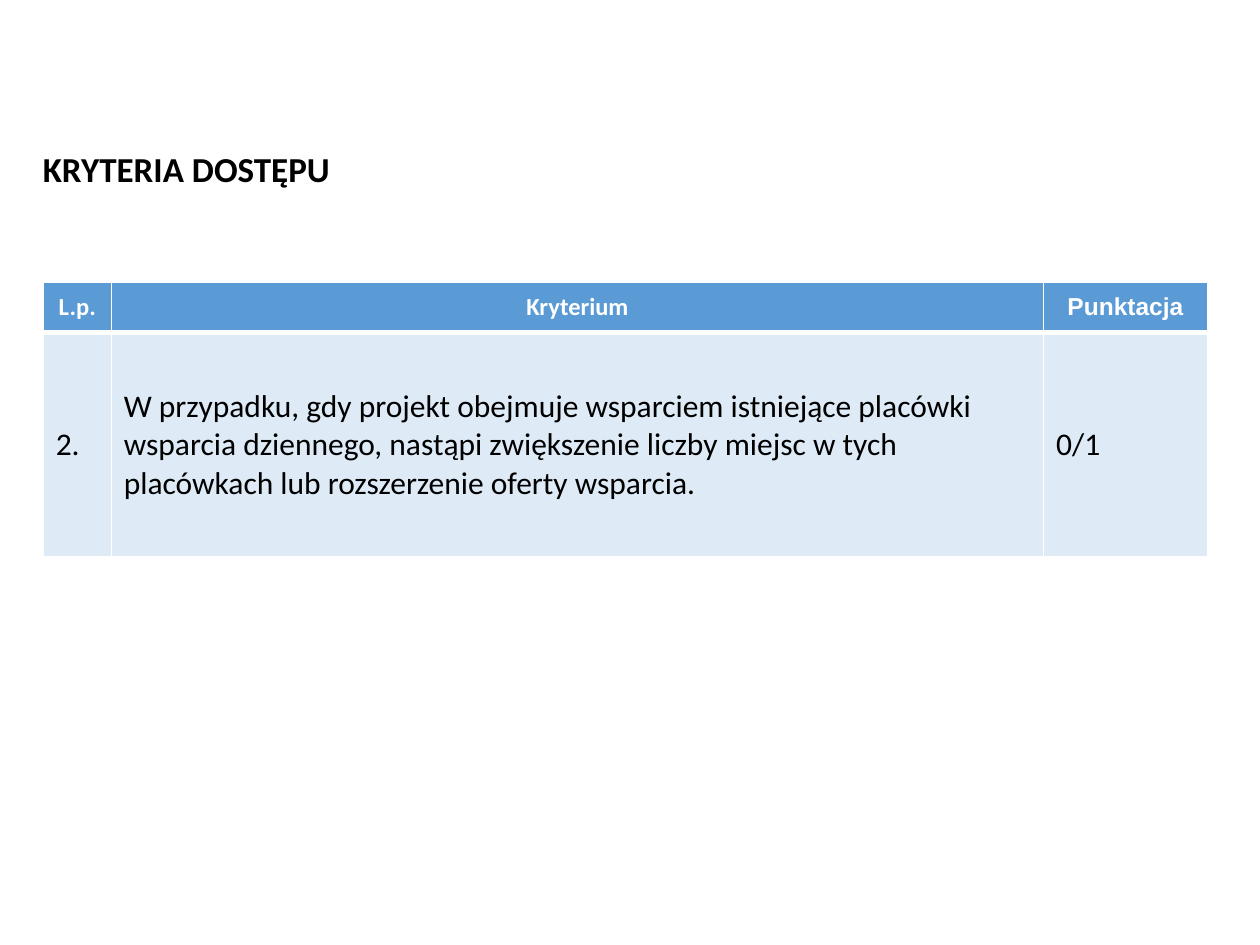
import pptx
import pptx.dml.color
import pptx.enum.text
import pptx.oxml
import pptx.oxml.ns
import pptx.util

Pt = pptx.util.Pt
RGBColor = pptx.dml.color.RGBColor
MSO_ANCHOR = pptx.enum.text.MSO_ANCHOR
PP_ALIGN = pptx.enum.text.PP_ALIGN

WHITE = RGBColor(0xFF, 0xFF, 0xFF)
BLACK = RGBColor(0x00, 0x00, 0x00)
BLUE = RGBColor(0x5B, 0x9B, 0xD5)
PALE_BLUE = RGBColor(0xDE, 0xEB, 0xF7)

COLUMN_WIDTHS = [38.9, 532.8, 93.6]
ROW_HEIGHTS = [28.8, 128.2]
HEADERS = [("L.p.", "Calibri"), ("Kryterium", "Calibri"), ("Punktacja", "Arial")]
CRITERION = [
    "2.",
    "W przypadku, gdy projekt obejmuje wsparciem istniejące placówki "
    "wsparcia dziennego, nastąpi zwiększenie liczby miejsc w tych "
    "placówkach lub rozszerzenie oferty wsparcia.",
    "0/1",
]


def add_run(p, text, size, color, bold, font="Calibri"):
    r = p.add_run()
    r.text = text
    r.font.name = font
    r.font.size = Pt(size)
    r.font.bold = bold
    r.font.color.rgb = color


def set_borders(cell, bottom):
    tc_pr = cell._tc.get_or_add_tcPr()
    widths = {"lnL": 1, "lnR": 1, "lnT": 1, "lnB": bottom}
    for i, (tag, width) in enumerate(widths.items()):
        ln = pptx.oxml.parse_xml(
            f'<a:{tag} {pptx.oxml.ns.nsdecls("a")} w="{Pt(width)}">'
            f'<a:solidFill><a:srgbClr val="{WHITE}"/></a:solidFill></a:{tag}>'
        )
        tc_pr.insert(i, ln)


def fill_cell(cell, text, size, color, bold, fill, align, bottom, font="Calibri"):
    cell.vertical_anchor = MSO_ANCHOR.MIDDLE
    cell.fill.solid()
    cell.fill.fore_color.rgb = fill
    set_borders(cell, bottom)
    p = cell.text_frame.paragraphs[0]
    p.alignment = align
    add_run(p, text, size, color, bold, font)


def place_title(slide, left, top, width, height):
    sp = slide.shapes.title
    sp.left, sp.top, sp.width, sp.height = Pt(left), Pt(top), Pt(width), Pt(height)
    tf = sp.text_frame
    tf.word_wrap = True
    tf.auto_size = pptx.enum.text.MSO_AUTO_SIZE.SHAPE_TO_FIT_TEXT
    tf.vertical_anchor = MSO_ANCHOR.MIDDLE
    p = tf.paragraphs[0]
    p.alignment = PP_ALIGN.LEFT
    add_run(p, "KRYTERIA DOSTĘPU", 20, BLACK, True)


def add_criteria_table(slide, left, top, width, height):
    table = slide.shapes.add_table(
        len(ROW_HEIGHTS), len(COLUMN_WIDTHS), Pt(left), Pt(top), Pt(width), Pt(height)
    ).table
    for column, share in zip(table.columns, COLUMN_WIDTHS):
        column.width = Pt(width * share / sum(COLUMN_WIDTHS))
    for row, share in zip(table.rows, ROW_HEIGHTS):
        row.height = Pt(height * share / sum(ROW_HEIGHTS))
    for i, (text, font) in enumerate(HEADERS):
        fill_cell(table.cell(0, i), text, 14, WHITE, True, BLUE, PP_ALIGN.CENTER, 3, font)
    for i, text in enumerate(CRITERION):
        fill_cell(table.cell(1, i), text, 18, BLACK, False, PALE_BLUE, PP_ALIGN.LEFT, 1)
        table.cell(1, i)._tc.tcPr.find(pptx.oxml.ns.qn("a:lnT")).set("w", str(Pt(3)))


def main():
    prs = pptx.Presentation()
    prs.slide_width, prs.slide_height = Pt(720), Pt(540)
    slide = prs.slides.add_slide(prs.slide_layouts[5])
    place_title(slide, 17.3, 80.6, 266.4, 31.7)
    add_criteria_table(slide, 24.7, 161.3, 665.3, 157)
    prs.save("out.pptx")


if __name__ == "__main__":
    main()
